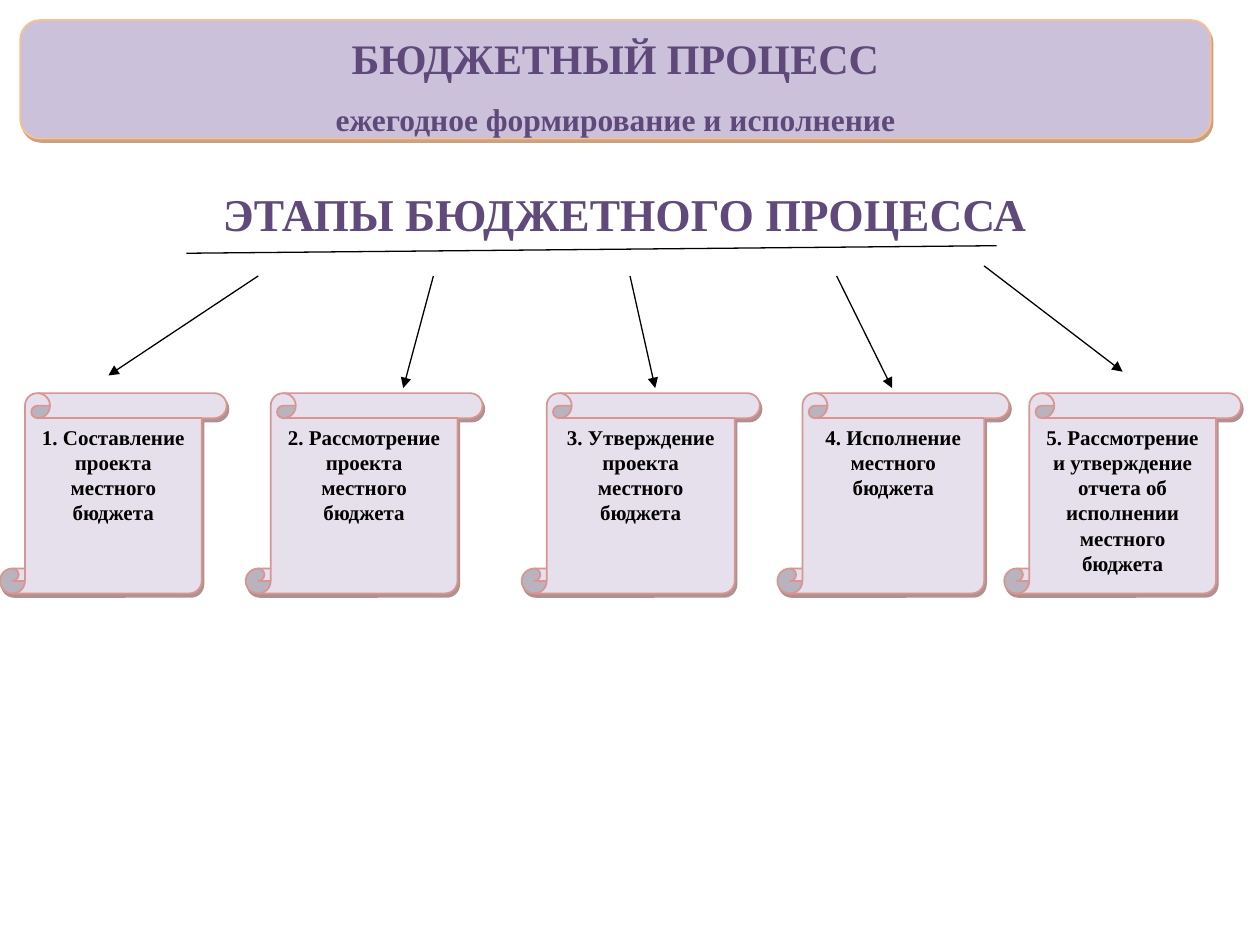
"""Build a slide showing the five stages of the budget process."""
from lxml.etree import SubElement
from pptx import Presentation
from pptx.dml.color import RGBColor
from pptx.enum.shapes import MSO_CONNECTOR, MSO_SHAPE
from pptx.enum.text import MSO_ANCHOR, PP_ALIGN
from pptx.oxml.ns import qn
from pptx.util import Inches, Pt

FONT = "Times New Roman"
BLACK = RGBColor(0x00, 0x00, 0x00)
PURPLE = RGBColor(0x5F, 0x49, 0x7A)
TITLE_PURPLE = RGBColor(0x60, 0x4A, 0x7B)
LILAC = RGBColor(0xCC, 0xC1, 0xDA)
PALE_LILAC = RGBColor(0xE6, 0xE0, 0xEC)
ORANGE = RGBColor(0xFA, 0xBF, 0x8F)
ROSE = RGBColor(0xD9, 0x95, 0x94)
BROWN = RGBColor(0x97, 0x47, 0x06)
MAROON = RGBColor(0x62, 0x24, 0x23)

TITLE = "ЭТАПЫ БЮДЖЕТНОГО ПРОЦЕССА"
HEADER = [("БЮДЖЕТНЫЙ ПРОЦЕСС", 24), ("ежегодное формирование и исполнение", 18)]
STAGES = [
    ("Составление проекта местного бюджета", 0, 1.8),
    ("Рассмотрение проекта местного бюджета", 1.95, 1.88),
    ("Утверждение проекта местного бюджета", 4.14, 1.89),
    ("Исполнение местного бюджета", 6.17, 1.84),
    ("Рассмотрение и утверждение отчета об исполнении местного бюджета", 7.97, 1.88),
]
SCROLL_TOP, SCROLL_HEIGHT = 3.12, 1.59
ARROWS = [
    (2.05, 2.19, 0.86, 2.98),
    (3.44, 2.19, 3.2, 3.08),
    (5, 2.19, 5.2, 3.08),
    (6.64, 2.19, 7.08, 3.08),
    (7.81, 2.11, 8.91, 2.95),
]
UNDERLINE = (1.48, 2.01, 7.91, 1.95)


def write(text_frame, lines, color, space_after=0):
    text_frame.word_wrap = True
    text_frame.text = "\n".join(text for text, size in lines)
    for paragraph, (text, size) in zip(text_frame.paragraphs, lines):
        paragraph.alignment = PP_ALIGN.CENTER
        paragraph.space_after = Pt(space_after)
        for run in paragraph.runs:
            font = run.font
            font.name, font.size, font.bold = FONT, Pt(size), True
            font.color.rgb = color


def add_panel(slide, kind, box, fill, line, shadow):
    shape = slide.shapes.add_shape(kind, *map(Inches, box))
    shape.fill.solid()
    shape.fill.fore_color.rgb = fill
    shape.line.color.rgb = line
    shape.line.width = Pt(1)
    shape.shadow.inherit = False
    effects = shape._element.spPr.find(qn("a:effectLst"))
    outer = SubElement(effects, qn("a:outerShdw"), blurRad="0", dist=str(Pt(2.2)),
                       dir=str(63 * 60000), algn="ctr", rotWithShape="0")
    tint = SubElement(outer, qn("a:srgbClr"), val=str(shadow))
    SubElement(tint, qn("a:alpha"), val="50000")
    shape.text_frame.vertical_anchor = MSO_ANCHOR.TOP
    return shape


def add_line(slide, ends, arrow):
    connector = slide.shapes.add_connector(MSO_CONNECTOR.STRAIGHT, *map(Inches, ends))
    connector.line.color.rgb = BLACK
    connector.line.width = Pt(0.75)
    properties = connector._element.spPr
    if arrow:
        SubElement(properties.find(qn("a:ln")), qn("a:tailEnd"), type="triangle")
    SubElement(properties, qn("a:effectLst"))


def main():
    presentation = Presentation()
    presentation.slide_width, presentation.slide_height = Inches(10), Inches(7.5)
    slide = presentation.slides.add_slide(presentation.slide_layouts[5])

    title = slide.shapes.title
    title.left, title.top, title.width, title.height = map(Inches, (0.39, 1.41, 9.14, 0.56))
    write(title.text_frame, [(TITLE, 26)], TITLE_PURPLE)
    title.text_frame.vertical_anchor = MSO_ANCHOR.MIDDLE

    header = add_panel(slide, MSO_SHAPE.ROUNDED_RECTANGLE, (0.16, 0.16, 9.45, 0.94),
                       LILAC, ORANGE, BROWN)
    write(header.text_frame, HEADER, PURPLE, space_after=10)

    for number, (stage, left, width) in enumerate(STAGES, 1):
        scroll = add_panel(slide, MSO_SHAPE.VERTICAL_SCROLL,
                           (left, SCROLL_TOP, width, SCROLL_HEIGHT),
                           PALE_LILAC, ROSE, MAROON)
        write(scroll.text_frame, [(f"{number}. {stage}", 12)], BLACK)

    for ends in ARROWS:
        add_line(slide, ends, arrow=True)
    add_line(slide, UNDERLINE, arrow=False)

    presentation.save("out.pptx")


if __name__ == "__main__":
    main()
